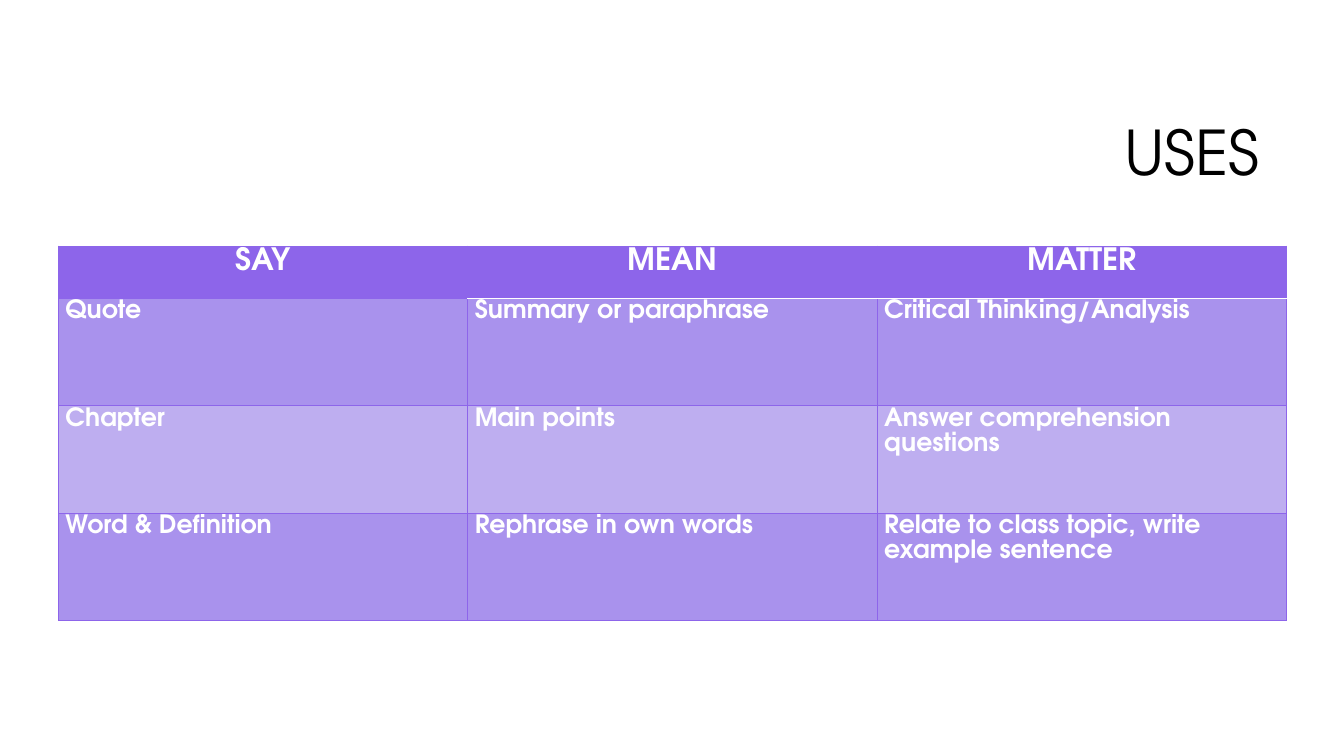
from lxml.etree import SubElement
from pptx import Presentation
from pptx.dml.color import RGBColor
from pptx.enum.text import MSO_ANCHOR, PP_ALIGN
from pptx.oxml.ns import qn
from pptx.util import Inches, Pt

FONT = "TeX Gyre Adventor"
PURPLE, BAND, PALE, WHITE, BLACK = "8D65EA", "A992ED", "BEAEF0", "FFFFFF", "000000"
ROWS = [
    ("SAY", "MEAN", "MATTER"),
    ("Quote", "Summary or paraphrase", "Critical Thinking/Analysis"),
    ("Chapter", "Main points", "Answer comprehension questions"),
    ("Word & Definition", "Rephrase in own words",
     "Relate to class topic, write example sentence"),
]


def rgb(value):
    return RGBColor.from_string(value)


def set_all(obj, values):
    for name, value in values.items():
        setattr(obj, name, value)


def write(tf, text, size, color, bold, align, spacing):
    p = tf.paragraphs[0]
    set_all(p, {"alignment": align, "line_spacing": spacing})
    r = p.add_run()
    r.text = text
    set_all(r.font, {"name": FONT, "size": Pt(size), "bold": bold})
    r.font.color.rgb = rgb(color)


def add_border(cell, side, color, width):
    ln = SubElement(cell._tc.get_or_add_tcPr(), qn(f"a:ln{side}"), w=str(Pt(width)))
    fill = SubElement(ln, qn("a:solidFill"))
    SubElement(fill, qn("a:srgbClr"), val=color)


def add_title(s, text, left, top, width, height):
    sp = s.shapes.title
    set_all(sp, {"left": Inches(left), "top": Inches(top),
                 "width": Inches(width), "height": Inches(height)})
    set_all(sp.text_frame, {"vertical_anchor": MSO_ANCHOR.MIDDLE, "word_wrap": True})
    write(sp.text_frame, text, 44, BLACK, False, PP_ALIGN.RIGHT, 0.9)


def fill_cell(cell, text, row, col):
    header = row == 0
    set_all(cell, {"margin_left": Inches(0.07), "margin_right": Inches(0.07),
                   "margin_top": 0, "margin_bottom": 0,
                   "vertical_anchor": MSO_ANCHOR.TOP})
    for side in "LRTB":
        under_header = (row, side) in ((0, "B"), (1, "T"))
        white = under_header and col > 0
        add_border(cell, side, WHITE if white else PURPLE, 1 if white else 0.75)
    cell.fill.solid()
    cell.fill.fore_color.rgb = rgb(PURPLE if header else BAND if row % 2 else PALE)
    write(cell.text_frame, text, 22 if header else 18, WHITE, True,
          PP_ALIGN.CENTER if header else PP_ALIGN.LEFT, 1.07)


def add_uses_table(s, left, top, width, height):
    header_height = 0.14 * height
    body_height = (height - header_height) / (len(ROWS) - 1)
    table = s.shapes.add_table(len(ROWS), len(ROWS[0]), Inches(left), Inches(top),
                               Inches(width), Inches(height)).table
    for column in table.columns:
        column.width = Inches(width / len(ROWS[0]))
    for i, texts in enumerate(ROWS):
        table.rows[i].height = Inches(body_height if i else header_height)
        for j, text in enumerate(texts):
            fill_cell(table.cell(i, j), text, i, j)


def main():
    prs = Presentation()
    set_all(prs, {"slide_width": Inches(13.33), "slide_height": Inches(7.5)})
    s = prs.slides.add_slide(prs.slide_layouts[5])
    add_title(s, "USES", 3.17, 0.84, 9.42, 1.41)
    add_uses_table(s, 0.58, 2.44, 12.18, 3.72)
    prs.save("out.pptx")


if __name__ == "__main__":
    main()
